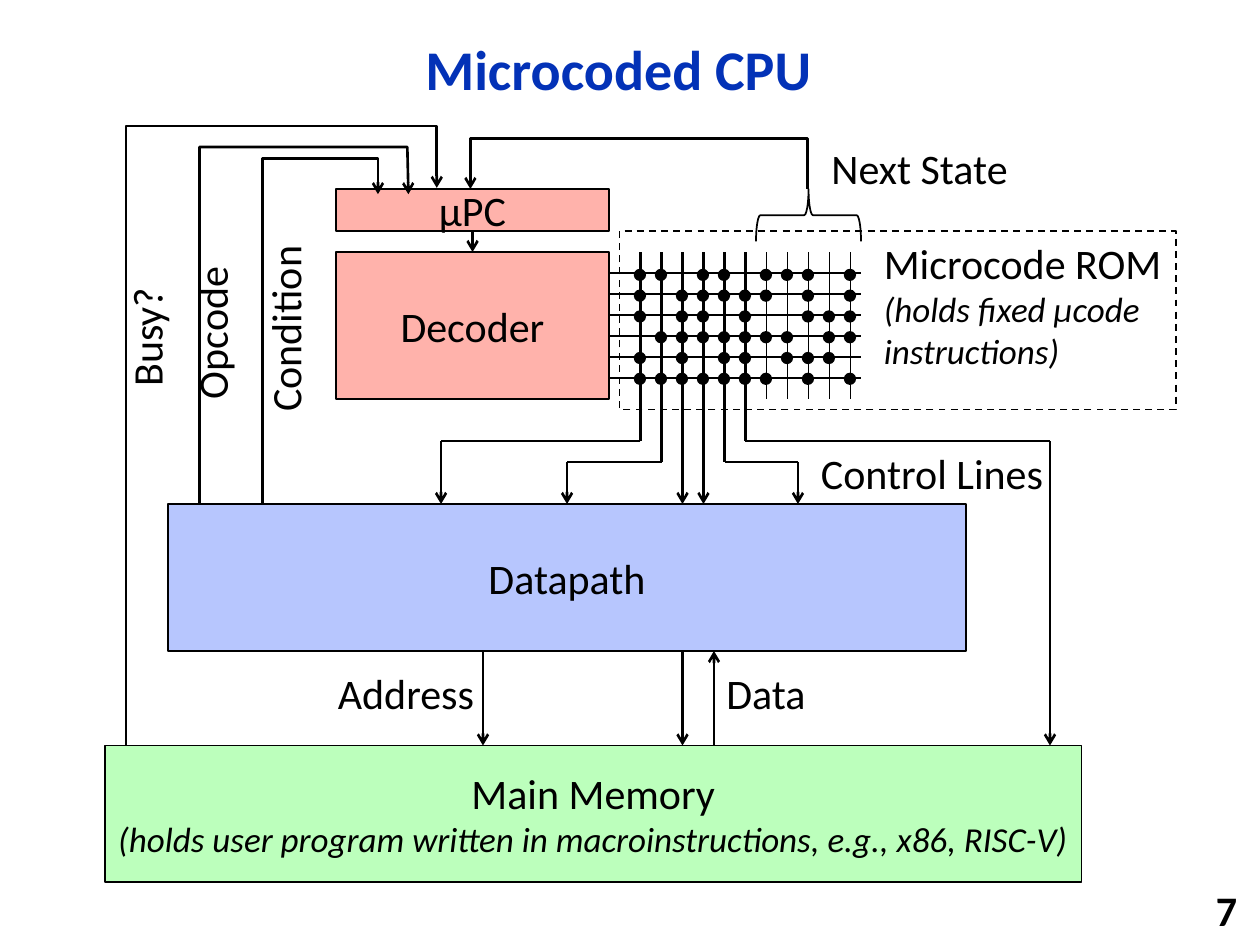
import pptx
import pptx.dml.color
import pptx.enum.dml
import pptx.enum.shapes
import pptx.enum.text
import pptx.oxml
import pptx.oxml.ns
import pptx.util

SHAPES = pptx.enum.shapes.MSO_SHAPE
ALIGN = pptx.enum.text.PP_ALIGN
ANCHOR = pptx.enum.text.MSO_ANCHOR

COLUMNS, ROWS = 120, 90
CELL = pptx.util.Inches(10) // COLUMNS
FONT, BLACK, BLUE = "Calibri", "000000", "0332B7"
LABEL_SIZE, NOTE_SIZE = 24, 20

BLOCKS = [
    ((16, 48, 76, 14), "B7C6FE", ["Datapath"]),
    ((10, 71, 93, 13), "BCFFBC", [
        "Main Memory",
        "(holds user program written in macroinstructions, e.g., x86, RISC-V)"]),
    ((32, 24, 26, 14), "FFB2AB", ["Decoder"]),
    ((32, 18, 26, 4), "FFB2AB", ["µPC"]),
]
LABELS = [
    ((31, 63, 15.6, 6), 0, ["Address"]),
    ((68, 63, 10.1, 6), 0, ["Data"]),
    ((78, 13, 19.6, 6), 0, ["Next State"]),
    ((77, 42, 23.9, 6), 0, ["Control Lines"]),
    ((12.5, 28.6, 15.2, 6), 270, ["Opcode"]),
    ((17.9, 28.2, 18.4, 6), 270, ["Condition"]),
    ((7.9, 29, 12, 6), 270, ["Busy?"]),
]
ROM_FRAME = (59, 22, 53, 17)
ROM_LABEL = ((83, 22, 29, 14.2), 0, ["Microcode ROM", "(holds fixed µcode instructions)"])
NEXT_STATE_BRACE = (74.5, 15.5, 5, 10)
ROM_BITS = [
    "XX.XX.XXX.X",
    "X.XXXXX.X.X",
    "X.XX.X..XXX",
    ".XXXXXXX.XX",
    "X.X.XX.XXX.",
    "XXXXXXX.X.X",
]
ROM_LEFT, ROM_TOP, ROM_PITCH = 61, 24, 2
CONTROL_LINE_ENDS = [42, 44, 48, 48, 44, 42]
STATE_LINE_END = 38
DATAPATH_TOP, MEMORY_TOP = 48, 71
CONTROL_BENDS = [(0, 42, DATAPATH_TOP), (1, 54, DATAPATH_TOP),
                 (4, 76, DATAPATH_TOP), (5, 100, MEMORY_TOP)]
ARROWS = [
    ((45, 22), (45, 24)),
    ((46, 62), (46, 71)),
    ((65, 62), (65, 71)),
    ((68, 71), (68, 62)),
]
FEEDBACK_PATHS = [
    [(76.9, 18), (76.9, 13.2), (44.8, 13.2), (44.8, 18)],
    [(19, 48), (19, 14), (38.8, 14), (38.9, 18.5)],
    [(25, 48), (25, 15.1), (36, 15.1), (36, 18.5)],
    [(12, 71), (12, 12), (41.6, 12), (41.6, 17.9)],
]


def color(value):
    return pptx.dml.color.RGBColor.from_string(value)


def grid(*values):
    return [round(value * CELL) for value in values]


def style_line(item, width, arrow=False):
    item.line.color.rgb = color(BLACK)
    item.line.width = pptx.util.Pt(width)
    if arrow:
        tail = pptx.oxml.parse_xml(
            f'<a:tailEnd {pptx.oxml.ns.nsdecls("a")} type="arrow"/>')
        item.line._get_or_add_ln().append(tail)


def add_line(slide, start, end, width=1.5, arrow=False):
    connector = slide.shapes.add_connector(
        pptx.enum.shapes.MSO_CONNECTOR.STRAIGHT, *grid(*start, *end))
    style_line(connector, width, arrow)
    connector._element.spPr.append(
        pptx.oxml.parse_xml(f'<a:effectLst {pptx.oxml.ns.nsdecls("a")}/>'))


def add_shape(slide, kind, box, fill=None):
    shape = slide.shapes.add_shape(kind, *grid(*box))
    shape.shadow.inherit = False
    if fill:
        shape.fill.solid()
        shape.fill.fore_color.rgb = color(fill)
    else:
        shape.fill.background()
    style_line(shape, 1)
    return shape


def write(shape, lines, align, anchor, size=LABEL_SIZE, ink=BLACK, bold=False):
    frame = shape.text_frame
    frame.text = "\n".join(lines)
    frame.vertical_anchor = anchor
    for index, paragraph in enumerate(frame.paragraphs):
        paragraph.alignment = align
        font = paragraph.font
        font.name, font.bold = FONT, bold
        font.size = pptx.util.Pt(NOTE_SIZE if index else size)
        font.italic = index > 0
        font.color.rgb = color(ink)
    return frame


def add_label(slide, box, rotation, lines):
    label = slide.shapes.add_textbox(*grid(*box))
    label.rotation = rotation
    frame = write(label, lines, ALIGN.LEFT, ANCHOR.TOP)
    frame.word_wrap = len(lines) > 1
    frame.auto_size = pptx.enum.text.MSO_AUTO_SIZE.SHAPE_TO_FIT_TEXT


def add_heading(slide, box, text, align, size, ink):
    heading = slide.shapes.add_textbox(*grid(*box))
    frame = write(heading, [text], align, ANCHOR.MIDDLE, size, ink, True)
    frame.word_wrap = True
    frame.paragraphs[0].line_spacing = 0.9


def add_rom(slide):
    for row in range(len(ROM_BITS)):
        y = ROM_TOP + ROM_PITCH * (row + 1)
        add_line(slide, (58, y), (82, y), 0.75)
    for column in range(len(ROM_BITS[0])):
        x = ROM_LEFT + ROM_PITCH * column
        control = column < len(CONTROL_LINE_ENDS)
        end = CONTROL_LINE_ENDS[column] if control else STATE_LINE_END
        add_line(slide, (x, ROM_TOP), (x, end), 1.5 if control else 0.75,
                 end == DATAPATH_TOP)
    for column, x, end in CONTROL_BENDS:
        y = CONTROL_LINE_ENDS[column]
        add_line(slide, (ROM_LEFT + ROM_PITCH * column, y), (x, y))
        add_line(slide, (x, y), (x, end), arrow=True)
    for row, bits in enumerate(ROM_BITS):
        for column, bit in enumerate(bits):
            if bit == "X":
                left = ROM_LEFT - 0.55 + ROM_PITCH * column
                top = ROM_TOP + 1.68 + 1.98 * row
                add_shape(slide, SHAPES.OVAL, (left, top, 1, 1), BLACK)
    frame = add_shape(slide, SHAPES.RECTANGLE, ROM_FRAME)
    frame.line.dash_style = pptx.enum.dml.MSO_LINE.DASH
    add_label(slide, *ROM_LABEL)
    add_shape(slide, SHAPES.LEFT_BRACE, NEXT_STATE_BRACE).rotation = 90


def add_feedback(slide, points):
    start, *others = [grid(*point) for point in points]
    builder = slide.shapes.build_freeform(*start)
    builder.add_line_segments(others, close=False)
    shape = builder.convert_to_shape()
    shape.shadow.inherit = False
    shape.fill.background()
    style_line(shape, 1.5, True)


def main():
    presentation = pptx.Presentation()
    presentation.slide_width = COLUMNS * CELL
    presentation.slide_height = ROWS * CELL
    slide = presentation.slides.add_slide(presentation.slide_layouts[6])
    add_heading(slide, (11, 2, 95.8, 9.7), "Microcoded CPU", ALIGN.CENTER, 32, BLUE)
    add_heading(slide, (94, 85, 25, 3.8), "7", ALIGN.RIGHT, 24, BLACK)
    for box, fill, lines in BLOCKS:
        block = add_shape(slide, SHAPES.RECTANGLE, box, fill)
        write(block, lines, ALIGN.CENTER, ANCHOR.MIDDLE)
    add_rom(slide)
    for start, end in ARROWS:
        add_line(slide, start, end, arrow=True)
    for points in FEEDBACK_PATHS:
        add_feedback(slide, points)
    for label in LABELS:
        add_label(slide, *label)
    presentation.save("out.pptx")


if __name__ == "__main__":
    main()
